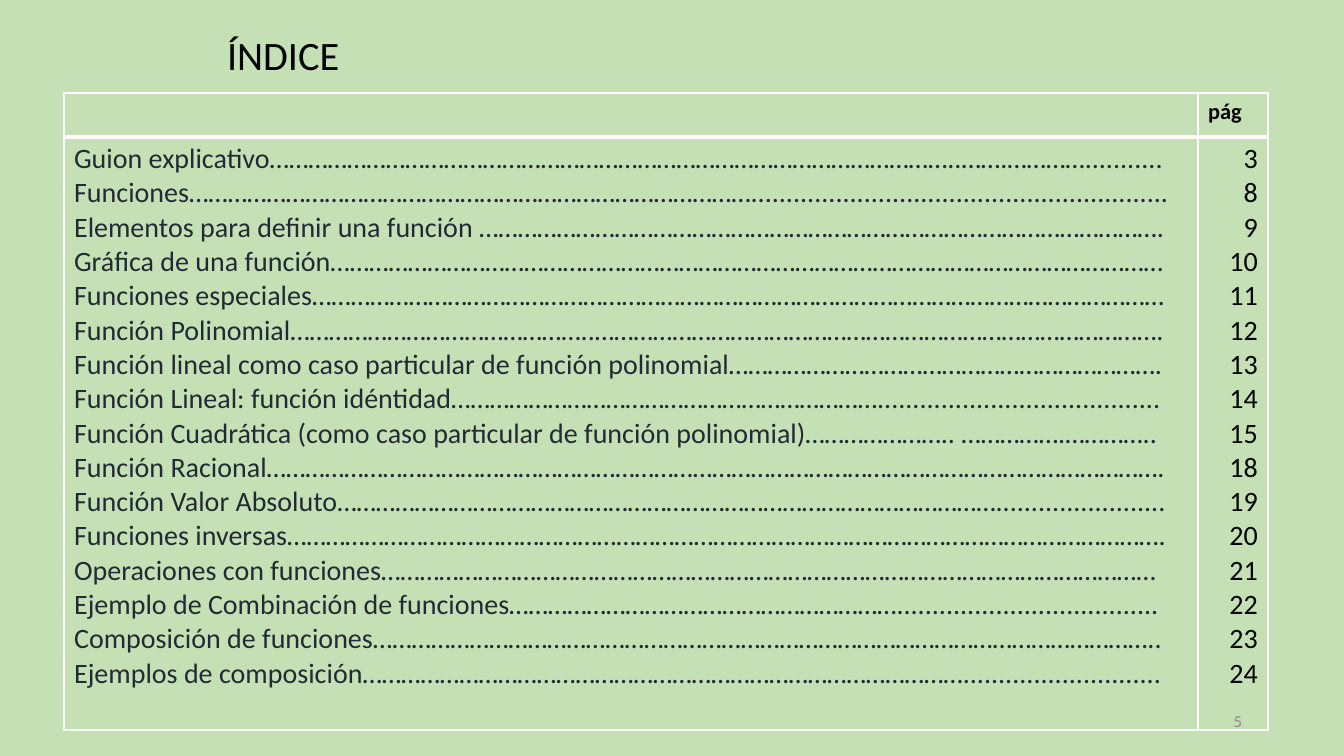
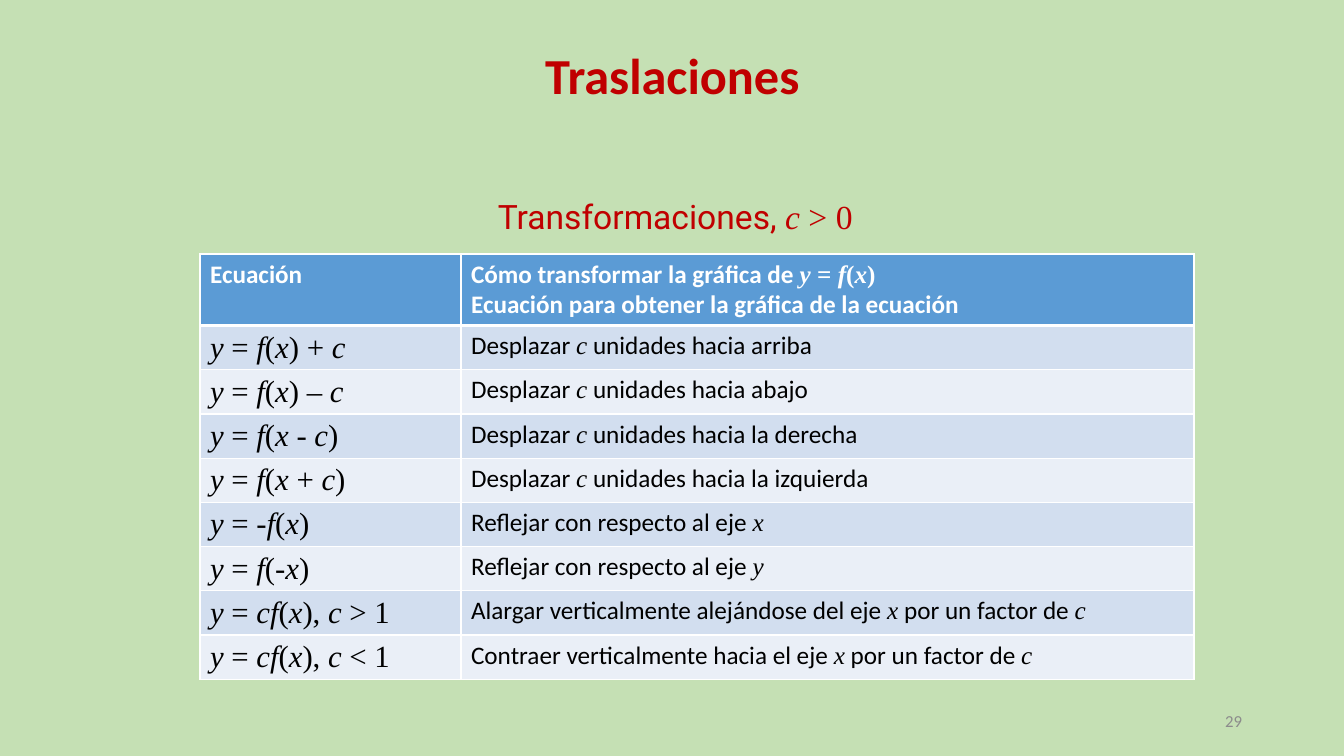
from itertools import groupby

from lxml import etree
from pptx import Presentation
from pptx.dml.color import RGBColor
from pptx.enum.text import MSO_ANCHOR, MSO_AUTO_SIZE, PP_ALIGN
from pptx.oxml.ns import qn
from pptx.util import Pt

LEFT, CENTER, RIGHT = PP_ALIGN.LEFT, PP_ALIGN.CENTER, PP_ALIGN.RIGHT
MIDDLE = MSO_ANCHOR.MIDDLE
NO_FIT, GROW = MSO_AUTO_SIZE.NONE, MSO_AUTO_SIZE.SHAPE_TO_FIT_TEXT
PX = 914400 / 100.8  # EMU per pixel
TITLE_ONLY = 5
TEXT_FONT, MATH_FONT, CAPTION_FONT = "Calibri", "Times New Roman", "Roboto"

COLORS = {
    "background": "C5E0B4",
    "black": "000000",
    "red": "C00000",
    "entry": "222A35",
    "page": "8C8C8C",
    "white": "FFFFFF",
    "header": "5B9BD5",
    "odd": "D2DEEF",
    "even": "EAEFF7",
}


def write(frame, lines, size, color, bold=False, align=LEFT, font=TEXT_FONT):
    """One paragraph per line; between $ signs, letters are italic maths."""
    for number, line in enumerate(lines):
        paragraph = frame.add_paragraph() if number else frame.paragraphs[0]
        paragraph.alignment = align
        for index, part in enumerate(line.split("$")):
            is_math = index % 2 == 1
            pieces = groupby(part, str.isalpha) if is_math else [(False, part)]
            for is_letter, piece in pieces:
                text = "".join(piece)
                if not text:
                    continue
                run = paragraph.add_run()
                run.text = text
                run.font.size = Pt(size)
                run.font.name = MATH_FONT if is_math else font
                run.font.bold = bold
                run.font.italic = is_letter
                run.font.color.rgb = RGBColor.from_string(COLORS[color])


def style_cell(cell, fill=None, top=1, bottom=1):
    """White borders, and a solid fill if one is named."""
    properties = cell._tc.get_or_add_tcPr()
    for side, width in (("lnL", 1), ("lnR", 1), ("lnT", top), ("lnB", bottom)):
        border = etree.SubElement(properties, qn(f"a:{side}"), w=str(Pt(width)))
        solid = etree.SubElement(border, qn("a:solidFill"))
        etree.SubElement(solid, qn("a:srgbClr"), val=COLORS["white"])
    if fill:
        cell.fill.solid()
        cell.fill.fore_color.rgb = RGBColor.from_string(COLORS[fill])
    else:
        cell.fill.background()


prs = Presentation()
prs.slide_width, prs.slide_height = round(1344 * PX), round(756 * PX)
backdrop = prs.slide_master.background.fill
backdrop.solid()
backdrop.fore_color.rgb = RGBColor.from_string(COLORS["background"])

# Content
index_entries = [
    ("Guion explicativo……………………………………………………………………………………………..…….…………...........", 3),
    ("Funciones……………………………………………………………………………...........................................................", 8),
    ("Elementos para definir una función …………………………………………………………………………………………….", 9),
    ("Gráfica de una función…………………………………………………………………………………………………………………", 10),
    ("Funciones especiales……………………………………………………………………………………………………………………", 11),
    ("Función Polinomial………………………………………..…………………………………………………………………………….", 12),
    ("Función lineal como caso particular de función polinomial………………………………………………………….", 13),
    ("Función Lineal: función idéntidad…………………………………………………………........................................", 14),
    ("Función Cuadrática (como caso particular de función polinomial)………………….. …………….…………..", 15),
    ("Función Racional………………………………………………………………………………………………………………………….", 18),
    ("Función Valor Absoluto…………………………………………………………………………………………........................", 19),
    ("Funciones inversas……………………………………………………………………………………………………………………….", 20),
    ("Operaciones con funciones…………………………………………………………………………………………………………", 21),
    ("Ejemplo de Combinación de funciones…………………………………………………….....................................", 22),
    ("Composición de funciones…………………………………………………………………………………………………………..", 23),
    ("Ejemplos de composición…………………………………………………………………………………............................", 24),
]
transformations = [
    ("$y = f(x) + c$", "Desplazar $c$ unidades hacia arriba"),
    ("$y = f(x) – c$", "Desplazar $c$ unidades hacia abajo"),
    ("$y = f(x - c)$", "Desplazar $c$ unidades hacia la derecha"),
    ("$y = f(x + c)$", "Desplazar $c$ unidades hacia la izquierda"),
    ("$y = -f(x)$", "Reflejar con respecto al eje $x$"),
    ("$y = f(-x)$", "Reflejar con respecto al eje $y$"),
    ("$y = cf(x), c > 1$", "Alargar verticalmente alejándose del eje $x$ por un factor de $c$"),
    ("$y = cf(x), c < 1$", "Contraer verticalmente hacia el eje $x$ por un factor de $c$"),
]

# Title, page number and empty table of each slide
pages = [
    # title, box, size, colour, bold, alignment, page, table corner, columns, rows
    ("ÍNDICE", (217, 28, 983, 58), 28.8, "black", False, LEFT, "5",
     (64, 93), (1134, 70), (44, 593)),
    ("Traslaciones", (93, 40, 1159, 77), 36, "red", True, CENTER, "29",
     (200, 254), (261, 733), (71,) + (44,) * len(transformations)),
]
tables = []
for heading, box, size, color, bold, align, page, corner, columns, rows in pages:
    slide = prs.slides.add_slide(prs.slide_layouts[TITLE_ONLY])
    title = slide.shapes.title
    title.left, title.top, title.width, title.height = (round(n * PX) for n in box)
    title.text_frame.vertical_anchor = MIDDLE
    title.text_frame.auto_size = NO_FIT
    write(title.text_frame, [heading], size, color, bold, align)
    title.text_frame.paragraphs[0].line_spacing = 0.9

    table_box = (*corner, sum(columns), sum(rows))
    table = slide.shapes.add_table(
        len(rows), len(columns), *(round(n * PX) for n in table_box)).table
    for column, width in zip(table.columns, columns):
        column.width = round(width * PX)
    for row, height in zip(table.rows, rows):
        row.height = round(height * PX)
    tables.append(table)

    page_number = slide.shapes.add_textbox(
        *(round(n * PX) for n in (950, 701, 302, 40))).text_frame
    page_number.word_wrap = True
    page_number.vertical_anchor = MIDDLE
    write(page_number, [page], 12, "page", align=RIGHT)

# Index table
index_table, transformation_table = tables
for column in range(2):
    style_cell(index_table.cell(0, column), bottom=3)
    style_cell(index_table.cell(1, column), top=3)
write(index_table.cell(0, 1).text_frame, ["pág"], 16, "black", bold=True)
write(index_table.cell(1, 0).text_frame,
      [entry for entry, _ in index_entries], 20, "entry")
write(index_table.cell(1, 1).text_frame,
      [str(page) for _, page in index_entries], 20, "black", align=RIGHT)

# Transformation table
headers = [
    ["Ecuación"],
    ["Cómo transformar la gráfica de $y = f(x)$",
     "Ecuación para obtener la gráfica de la ecuación"],
]
for column, lines in enumerate(headers):
    cell = transformation_table.cell(0, column)
    style_cell(cell, "header", bottom=3)
    write(cell.text_frame, lines, 18, "white", bold=True)
for row, texts in enumerate(transformations, start=1):
    for column, (text, size) in enumerate(zip(texts, (22, 18))):
        cell = transformation_table.cell(row, column)
        style_cell(cell, "odd" if row % 2 else "even", top=3 if row == 1 else 1)
        write(cell.text_frame, [text], size, "black")

# Caption above the transformation table
caption = prs.slides[1].shapes.add_textbox(
    *(round(n * PX) for n in (488, 191, 384, 50))).text_frame
caption.word_wrap = False
caption.auto_size = GROW
write(caption, ["Transformaciones, $c > 0$"], 24, "red", font=CAPTION_FONT)

prs.save("out.pptx")
